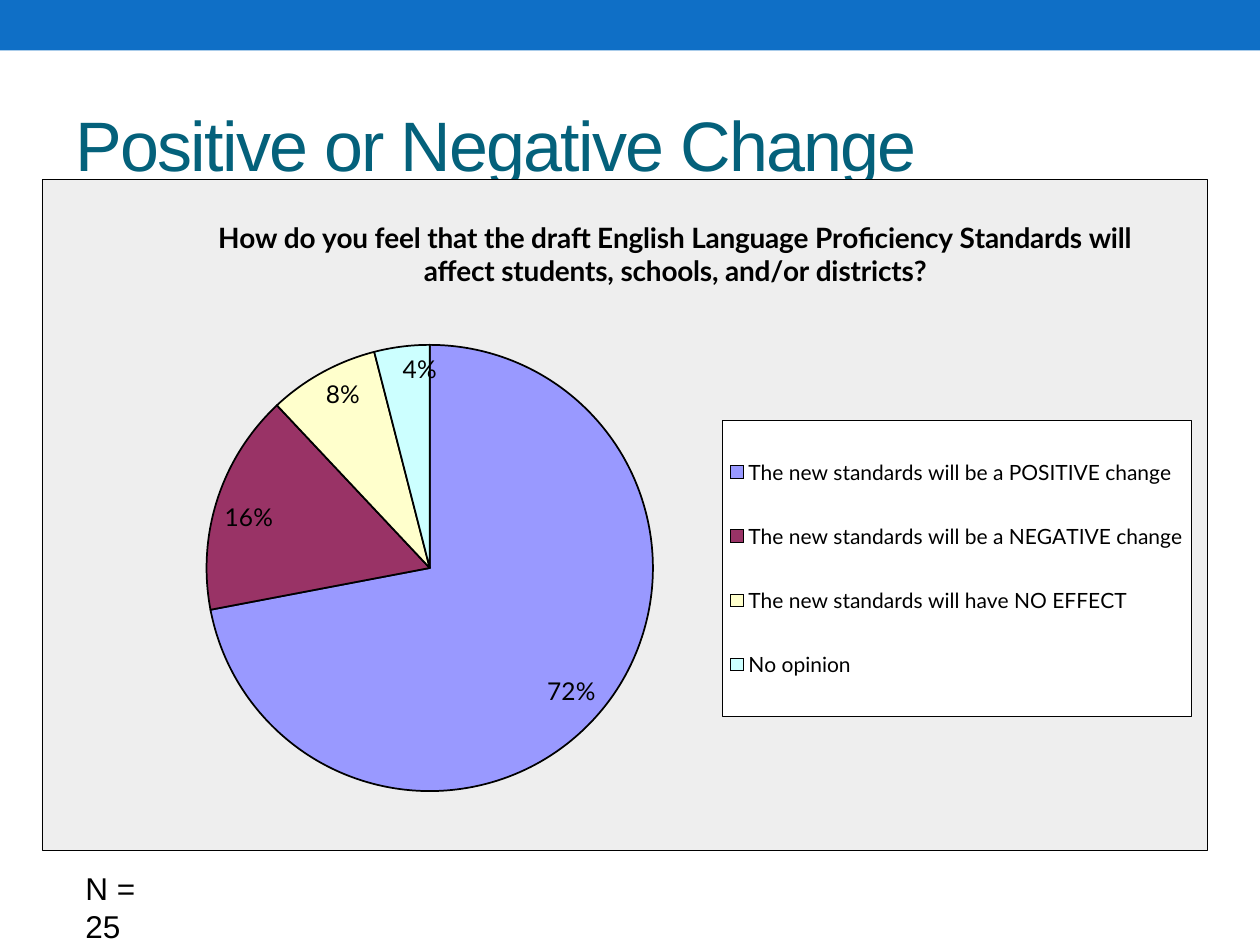
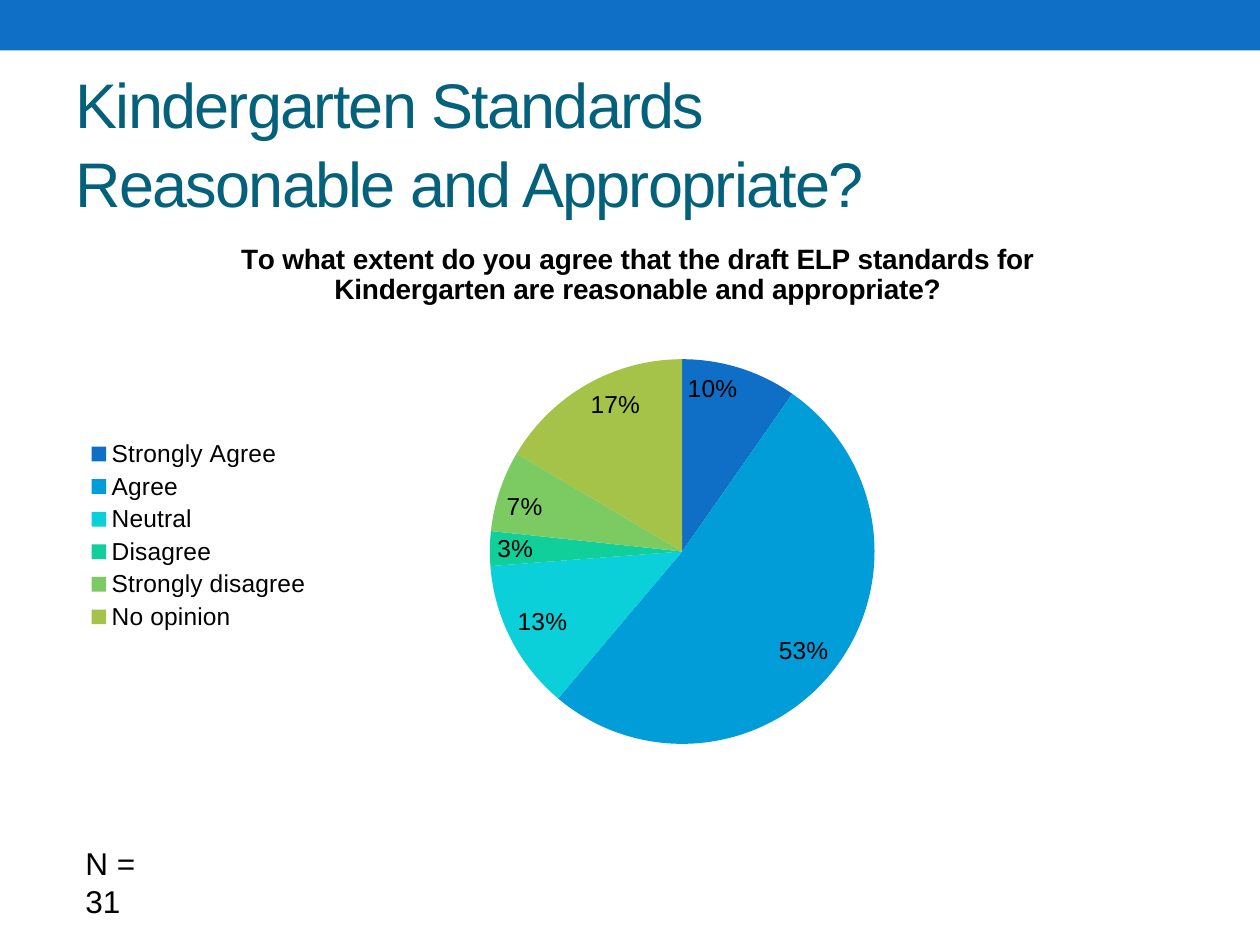
from lxml.etree import SubElement
from pptx import Presentation
from pptx.chart.data import CategoryChartData
from pptx.dml.color import RGBColor
from pptx.enum.chart import XL_CHART_TYPE as ChartType
from pptx.enum.chart import XL_LABEL_POSITION as LabelPosition
from pptx.enum.chart import XL_LEGEND_POSITION as LegendPosition
from pptx.enum.shapes import MSO_SHAPE as Preset
from pptx.enum.text import MSO_ANCHOR as Anchor
from pptx.enum.text import PP_ALIGN as Align
from pptx.oxml import parse_xml
from pptx.oxml.ns import nsdecls, qn
from pptx.util import Inches, Pt

COLORS = {
    "band": "0F6FC6", "title": "04617B", "text": "000000",
    "panel": "EEEEEE", "white": "FFFFFF",
    "positive": "9999FF", "negative": "993366",
    "no_effect": "FFFFCC", "no_opinion": "CCFFFF",
    "strongly_agree": "0F6FC6", "agree": "009DD9", "neutral": "0BD0D9",
    "disagree": "10CF9B", "strongly_disagree": "7CCA62", "undecided": "A5C249",
}
FONT = "Arial"
TITLE_BOX = (0.5, 0.58, 9, 1.08)

CHANGE = {
    "title": "Positive or Negative Change",
    "title_size": 40,
    "question": "How do you feel that the draft English Language Proficiency "
                "Standards will affect students, schools, and/or districts?",
    "question_at": (0.147, 0.05),
    "answers": [
        ("The new standards will be a POSITIVE change", 0.72, "positive"),
        ("The new standards will be a NEGATIVE change", 0.16, "negative"),
        ("The new standards will have NO EFFECT", 0.08, "no_effect"),
        ("No opinion", 0.04, "no_opinion"),
    ],
    "font": "Lato",
    "chart_box": (0.33, 1.42, 9.25, 5.33),
    "pie_area": (0.137, 0.247, 0.392, 0.665),
    "legend_side": LegendPosition.RIGHT,
    "legend_size": 12,
    "legend_area": (0.584, 0.36, 0.403, 0.44),
    "framed": True,
    "count": "N = 25",
    "count_box": (0.58, 6.85, 0.86, 0.4),
}
KINDERGARTEN = {
    "title": "Kindergarten Standards\vReasonable and Appropriate?",
    "title_size": 36,
    "question": "To what extent do you agree that the draft ELP standards for "
                "Kindergarten are reasonable and appropriate?",
    "question_at": (0.145, 0.045),
    "answers": [
        ("Strongly Agree", 0.10, "strongly_agree"),
        ("Agree", 0.53, "agree"),
        ("Neutral", 0.13, "neutral"),
        ("Disagree", 0.03, "disagree"),
        ("Strongly disagree", 0.07, "strongly_disagree"),
        ("No opinion", 0.17, "undecided"),
    ],
    "font": FONT,
    "chart_box": (0.58, 1.64, 8.92, 5.22),
    "pie_area": (0.109, 0.232, 0.866, 0.585),
    "legend_side": LegendPosition.LEFT,
    "legend_size": 14,
    "legend_area": None,
    "framed": False,
    "count": "N = 31",
    "count_box": (0.58, 6.65, 0.86, 0.4),
}


def color(name):
    return RGBColor.from_string(COLORS[name])


def inches(box):
    return [Inches(length) for length in box]


def style_font(font, size, name=FONT, color_name="text", bold=False):
    font.size = Pt(size)
    font.name = name
    font.bold = bold
    font.color.rgb = color(color_name)


def place_part(part, index, area):
    layout = part.find(qn("c:layout"))
    if layout is not None:
        part.remove(layout)
    layout = parse_xml(f"<c:layout {nsdecls('c')}/>")
    part.insert(index, layout)
    manual = SubElement(layout, qn("c:manualLayout"))
    if index == 0:
        SubElement(manual, qn("c:layoutTarget")).set("val", "inner")
    for key in ("xMode", "yMode"):
        SubElement(manual, qn(f"c:{key}")).set("val", "edge")
    for key, value in zip("xywh", area):
        SubElement(manual, qn(f"c:{key}")).set("val", str(value))


def frame_properties(fill, outlined=True):
    line = (f'<a:ln w="3175"><a:solidFill><a:srgbClr val="{COLORS["text"]}"/>'
            "</a:solidFill></a:ln>") if outlined else "<a:ln><a:noFill/></a:ln>"
    return parse_xml(
        f'<c:spPr {nsdecls("c", "a")}><a:solidFill><a:srgbClr val="{COLORS[fill]}"/>'
        f"</a:solidFill>{line}</c:spPr>")


def add_band(prs, slide):
    band = slide.shapes.add_shape(Preset.RECTANGLE, 0, 0, prs.slide_width, Inches(0.4))
    band.shadow.inherit = False
    band.fill.solid()
    band.fill.fore_color.rgb = color("band")
    band.line.fill.background()
    prs.slide_master.shapes._spTree.insert(2, band._element)


def add_title(slide, text, size, box):
    title = slide.shapes.title
    title.left, title.top, title.width, title.height = inches(box)
    frame = title.text_frame
    frame.text = text
    frame.vertical_anchor = Anchor.MIDDLE
    paragraph = frame.paragraphs[0]
    paragraph.alignment = Align.LEFT
    paragraph.line_spacing = 1.05
    for run in paragraph.runs:
        style_font(run.font, size, color_name="title")
        run.font._element.set("spc", "-100")


def add_count(slide, text, box):
    frame = slide.shapes.add_textbox(*inches(box)).text_frame
    frame.word_wrap = True
    frame.text = text
    style_font(frame.paragraphs[0].runs[0].font, 18)


def add_question(chart, survey):
    frame = chart.chart_title.text_frame
    frame.text = survey["question"]
    style_font(frame.paragraphs[0].runs[0].font, 16, survey["font"], bold=True)
    chart.chart_title.include_in_layout = False
    place_part(chart.chart_title._element, 1, survey["question_at"])


def add_legend(chart, survey):
    chart.has_legend = True
    legend = chart.legend
    legend.position = survey["legend_side"]
    legend.include_in_layout = False
    style_font(legend.font, survey["legend_size"], survey["font"])
    if survey["legend_area"]:
        place_part(legend._element, 1, survey["legend_area"])


def style_slices(plot, survey):
    plot.vary_by_categories = True
    for index, (_, _, color_name) in enumerate(survey["answers"]):
        part = plot.series[0].points[index].format
        part.fill.solid()
        part.fill.fore_color.rgb = color(color_name)
        if survey["framed"]:
            part.line.color.rgb = color("text")
            part.line.width = Pt(1)
        else:
            part.line.fill.background()
    labels = plot.series[0].data_labels
    labels.show_value = True
    labels.number_format = "0%"
    labels.number_format_is_linked = False
    labels.position = LabelPosition.INSIDE_END
    style_font(labels.font, 14, survey["font"])


def frame_chart(chart):
    space = chart._chartSpace
    space.chart.addnext(frame_properties("panel"))
    space.chart.plotArea.append(frame_properties("panel", outlined=False))
    overlay = chart.legend._element.find(qn("c:overlay"))
    overlay.addnext(frame_properties("white"))


def add_pie(slide, survey, box):
    data = CategoryChartData(number_format="0%")
    data.categories = [answer for answer, _, _ in survey["answers"]]
    data.add_series("Series 1", [share for _, share, _ in survey["answers"]])
    chart = slide.shapes.add_chart(ChartType.PIE, *inches(box), data).chart
    style_font(chart.font, 10, survey["font"])
    add_question(chart, survey)
    add_legend(chart, survey)
    style_slices(chart.plots[0], survey)
    place_part(chart._chartSpace.chart.plotArea, 0, survey["pie_area"])
    if survey["framed"]:
        frame_chart(chart)


def add_survey_slide(prs, survey):
    slide = prs.slides.add_slide(prs.slide_layouts[5])
    add_title(slide, survey["title"], survey["title_size"], TITLE_BOX)
    add_pie(slide, survey, survey["chart_box"])
    add_count(slide, survey["count"], survey["count_box"])
    return slide


def main():
    prs = Presentation()
    prs.slide_width, prs.slide_height = Inches(10), Inches(7.5)
    slides = [add_survey_slide(prs, survey) for survey in (CHANGE, KINDERGARTEN)]
    add_band(prs, slides[0])
    prs.save("out.pptx")


if __name__ == "__main__":
    main()
